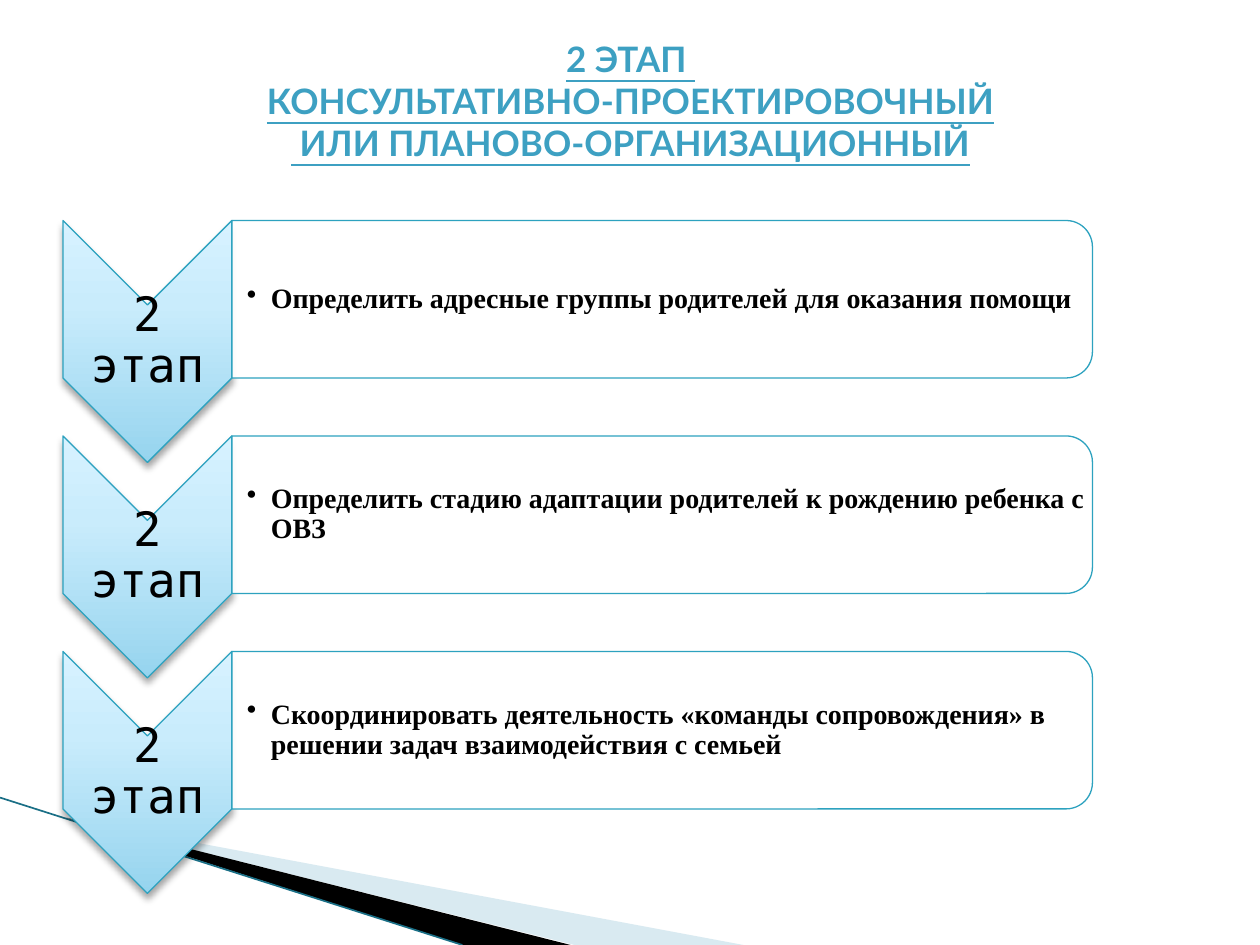
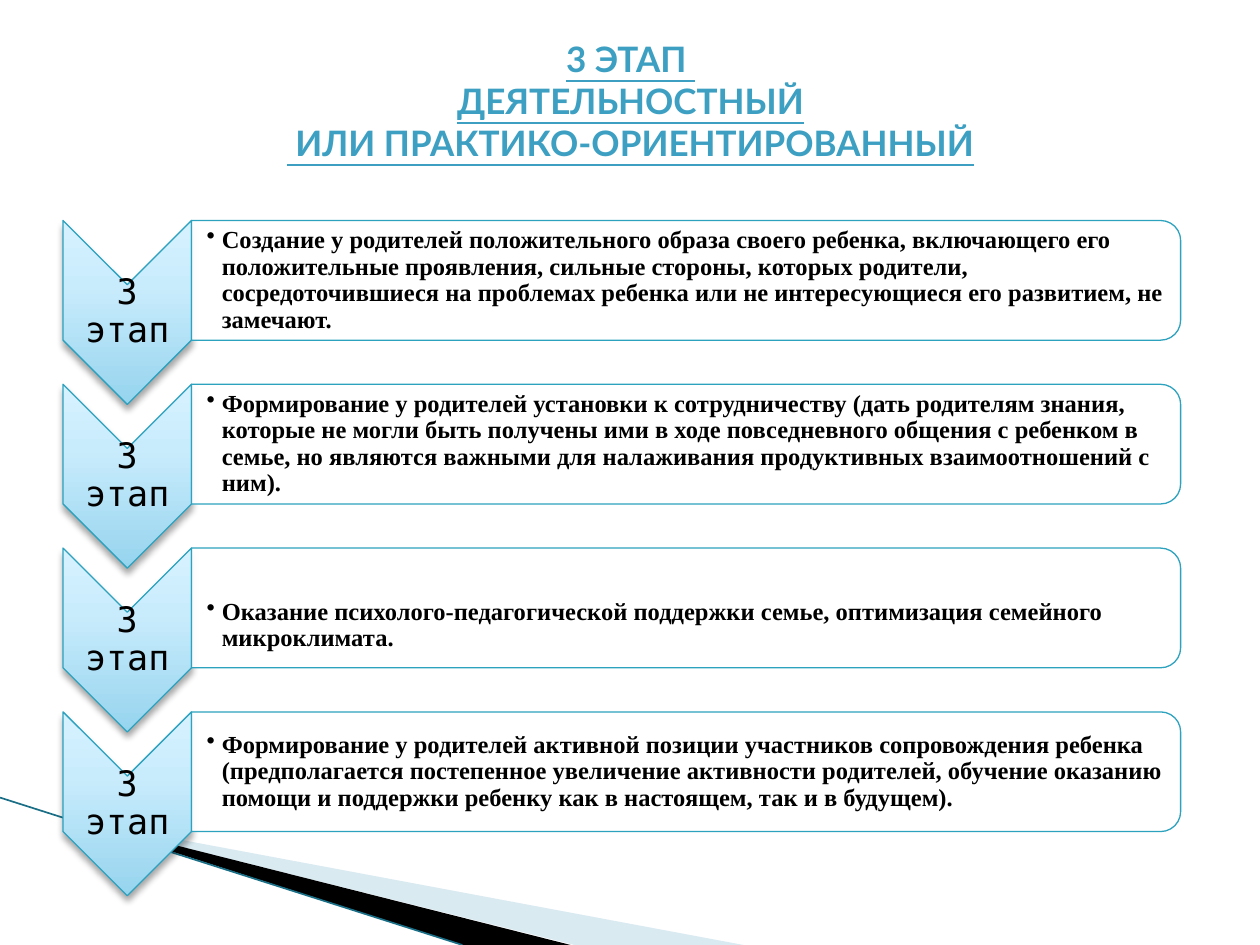
"""Build two slides that describe the stages of work with parents."""
from lxml import etree
from pptx import Presentation
from pptx.dml.color import RGBColor
from pptx.enum.shapes import MSO_CONNECTOR, MSO_SHAPE
from pptx.enum.text import MSO_ANCHOR, MSO_AUTO_SIZE, PP_ALIGN
from pptx.oxml import parse_xml
from pptx.oxml.ns import nsdecls, qn
from pptx.util import Inches, Pt

CHEVRON = MSO_SHAPE.CHEVRON
ROUNDED_BAR = MSO_SHAPE.ROUND_2_SAME_RECTANGLE
STRAIGHT = MSO_CONNECTOR.STRAIGHT
MIDDLE = MSO_ANCHOR.MIDDLE
CENTER = PP_ALIGN.CENTER
LEFT = PP_ALIGN.LEFT
NO_AUTOFIT = MSO_AUTO_SIZE.NONE

BLACK = RGBColor(0x00, 0x00, 0x00)
WHITE = RGBColor(0xFF, 0xFF, 0xFF)
TITLE_BLUE = RGBColor(0x3D, 0xA0, 0xC2)
OUTLINE_BLUE = RGBColor(0x2D, 0xA2, 0xBF)
PALE_BLUE = RGBColor(0xA0, 0xCB, 0xDC)
DARK_TEAL = RGBColor(0x1A, 0x6F, 0x86)
CHEVRON_STOPS = (
    (0, RGBColor(0x96, 0xD4, 0xEE)),
    (65, RGBColor(0xC9, 0xEC, 0xFC)),
    (100, RGBColor(0xD7, 0xF2, 0xFF)),
)

TITLE_FONT = "Lato"
LABEL_FONT = "DejaVu Sans Mono"
BODY_FONT = "Times New Roman"
ROWS_LEFT = 0.5
ROWS_TOP = 1.75

STAGES = (
    {
        "title": ("2 ЭТАП ", "КОНСУЛЬТАТИВНО-ПРОЕКТИРОВОЧНЫЙ",
                  " ИЛИ ПЛАНОВО-ОРГАНИЗАЦИОННЫЙ"),
        "label": "2 этап",
        "chevron_size": (1.34, 1.92),
        "bar_size": (6.83, 1.25),
        "pitch": 1.71,
        "label_points": 27,
        "body_points": 16,
        "indent": 0.19,
        "items": (
            ("Определить адресные группы родителей для оказания помощи", 0),
            ("Определить стадию адаптации родителей к рождению ребенка с ОВЗ", 0),
            ("Скоординировать деятельность «команды сопровождения» в решении "
             "задач взаимодействия с семьей", 0),
        ),
    },
    {
        "title": ("3 ЭТАП ", "ДЕЯТЕЛЬНОСТНЫЙ",
                  " ИЛИ ПРАКТИКО-ОРИЕНТИРОВАННЫЙ"),
        "label": "3 этап",
        "chevron_size": (1.02, 1.46),
        "bar_size": (7.85, 0.95),
        "pitch": 1.3,
        "label_points": 20,
        "body_points": 14,
        "indent": 0.12,
        "items": (
            ("Создание у родителей положительного образа своего ребенка, "
             "включающего его положительные проявления, сильные стороны, "
             "которых родители, сосредоточившиеся на проблемах ребенка или не "
             "интересующиеся его развитием, не замечают.", 0),
            ("Формирование у родителей установки к сотрудничеству (дать "
             "родителям знания, которые не могли быть получены ими в ходе "
             "повседневного общения с ребенком в семье, но являются важными "
             "для налаживания продуктивных взаимоотношений с ним).", 0),
            ("Оказание психолого-педагогической поддержки семье, оптимизация "
             "семейного микроклимата.", 0.28),
            ("Формирование у родителей активной позиции участников "
             "сопровождения ребенка (предполагается постепенное увеличение "
             "активности родителей, обучение оказанию помощи и поддержки "
             "ребенку как в настоящем, так и в будущем).", 0),
        ),
    },
)


def set_fill(shape, color, opacity=100):
    """Fill a shape with one colour at an opacity in percent."""
    shape.fill.solid()
    shape.fill.fore_color.rgb = color
    if opacity < 100:
        node = shape._element.spPr.find(qn("a:solidFill")).find(qn("a:srgbClr"))
        etree.SubElement(node, qn("a:alpha"), val=str(opacity * 1000))


def set_gradient(shape, stops):
    """Fill a shape with an upward gradient that ignores its rotation."""
    stop_xml = "".join(
        f'<a:gs pos="{position * 1000}"><a:srgbClr val="{color}"/></a:gs>'
        for position, color in stops)
    gradient = parse_xml(
        f'<a:gradFill {nsdecls("a")} rotWithShape="0"><a:gsLst>{stop_xml}</a:gsLst>'
        '<a:lin ang="16200000" scaled="0"/></a:gradFill>')
    shape._element.spPr.find(qn("a:prstGeom")).addnext(gradient)


def add_soft_shadow(shape):
    """Put a soft shadow below a shape."""
    effects = shape._element.spPr.find(qn("a:effectLst"))
    effects.append(parse_xml(
        f'<a:outerShdw {nsdecls("a")} blurRad="50800" dist="38100" dir="5400000" '
        'rotWithShape="0"><a:srgbClr val="000000"><a:alpha val="35000"/>'
        '</a:srgbClr></a:outerShdw>'))


def set_bullet(paragraph, indent):
    """Give a paragraph a round bullet with a hanging indent in inches."""
    properties = paragraph._p.get_or_add_pPr()
    properties.set("marL", str(Inches(indent)))
    properties.set("indent", str(-Inches(indent)))
    etree.SubElement(properties, qn("a:buChar"), char="•")


def write_text(shape, lines, *, font, size, color=BLACK, bold=False,
               underline=False, align=LEFT, spacing=1.0, indent=None,
               insets=(0, 0, 0, 0)):
    """Write lines as paragraphs with one format."""
    frame = shape.text_frame
    frame.word_wrap = True
    frame.auto_size = NO_AUTOFIT
    frame.vertical_anchor = MIDDLE
    (frame.margin_left, frame.margin_top,
     frame.margin_right, frame.margin_bottom) = map(Inches, insets)
    for index, line in enumerate(lines):
        paragraph = frame.add_paragraph() if index else frame.paragraphs[0]
        paragraph.alignment = align
        paragraph.line_spacing = spacing
        paragraph.space_before = Pt(0)
        if indent is not None:
            set_bullet(paragraph, indent)
        run = paragraph.add_run()
        run.text = line
        run.font.name = font
        run.font.size = Pt(size)
        run.font.bold = bold
        run.font.underline = underline
        run.font.color.rgb = color


def add_turned_shape(slide, kind, left, top, width, height):
    """Add an outlined shape turned by 90 degrees that covers the given area."""
    shape = slide.shapes.add_shape(
        kind, Inches(left + (width - height) / 2), Inches(top + (height - width) / 2),
        Inches(height), Inches(width))
    shape.rotation = 90
    shape.shadow.inherit = False
    shape.line.color.rgb = OUTLINE_BLUE
    shape.line.width = Pt(0.75)
    return shape


def add_wedge(slide, points, color, opacity=100):
    """Add a filled outline through points given in inches."""
    start, *others = [(Inches(x), Inches(y)) for x, y in points]
    builder = slide.shapes.build_freeform(*start)
    builder.add_line_segments(others, close=True)
    wedge = builder.convert_to_shape()
    wedge.shadow.inherit = False
    wedge.line.fill.background()
    set_fill(wedge, color, opacity)


def add_corner_decoration(slide):
    """Draw the wedges and the line in the lower left corner."""
    add_wedge(slide, ((0.55, 6.5), (5.9, 7.5), (4.56, 7.5)), PALE_BLUE, 40)
    add_wedge(slide, ((0.53, 6.49), (4.53, 7.5), (3.67, 7.5)), BLACK)
    line = slide.shapes.add_connector(
        STRAIGHT, Inches(0), Inches(6.33), Inches(3.67), Inches(7.5))
    line.line.color.rgb = DARK_TEAL
    line.line.width = Pt(0.95)
    etree.SubElement(line._element.spPr, qn("a:effectLst"))


def add_title(slide, lines):
    """Place and format the slide title."""
    title = slide.shapes.title
    title.left, title.top, title.width, title.height = map(
        Inches, (0.33, 0.21, 9.35, 1.17))
    write_text(title, lines, font=TITLE_FONT, size=20, color=TITLE_BLUE,
               bold=True, underline=True, align=CENTER)


def add_row(slide, stage, top, text, top_inset):
    """Add a labelled chevron and the bar with its bullet."""
    chevron_width, chevron_height = stage["chevron_size"]
    bar_width, bar_height = stage["bar_size"]
    bar_left = ROWS_LEFT + chevron_width

    chevron = add_turned_shape(
        slide, CHEVRON, ROWS_LEFT, top, chevron_width, chevron_height)
    set_gradient(chevron, CHEVRON_STOPS)
    add_soft_shadow(chevron)
    label = slide.shapes.add_textbox(
        Inches(ROWS_LEFT), Inches(top + chevron_width / 2),
        Inches(chevron_width), Inches(chevron_height - chevron_width))
    write_text(label, [stage["label"]], font=LABEL_FONT,
               size=stage["label_points"], align=CENTER, spacing=0.9,
               insets=(0.02, 0.02, 0.02, 0.02))

    bar = add_turned_shape(slide, ROUNDED_BAR, bar_left, top, bar_width, bar_height)
    set_fill(bar, WHITE, 90)
    body = slide.shapes.add_textbox(
        Inches(bar_left), Inches(top), Inches(bar_width), Inches(bar_height))
    write_text(body, [text], font=BODY_FONT, size=stage["body_points"],
               bold=True, spacing=0.9, indent=stage["indent"],
               insets=(0.12, top_inset, 0.06, 0))


def add_stage_slide(presentation, stage):
    """Add one slide for a stage."""
    slide = presentation.slides.add_slide(presentation.slide_layouts[5])
    add_corner_decoration(slide)
    add_title(slide, stage["title"])
    for index, (text, top_inset) in enumerate(stage["items"]):
        add_row(slide, stage, ROWS_TOP + index * stage["pitch"], text, top_inset)


def main():
    """Build and save the presentation."""
    presentation = Presentation()
    presentation.slide_width = Inches(10)
    presentation.slide_height = Inches(7.5)
    for stage in STAGES:
        add_stage_slide(presentation, stage)
    presentation.save("out.pptx")


if __name__ == "__main__":
    main()
